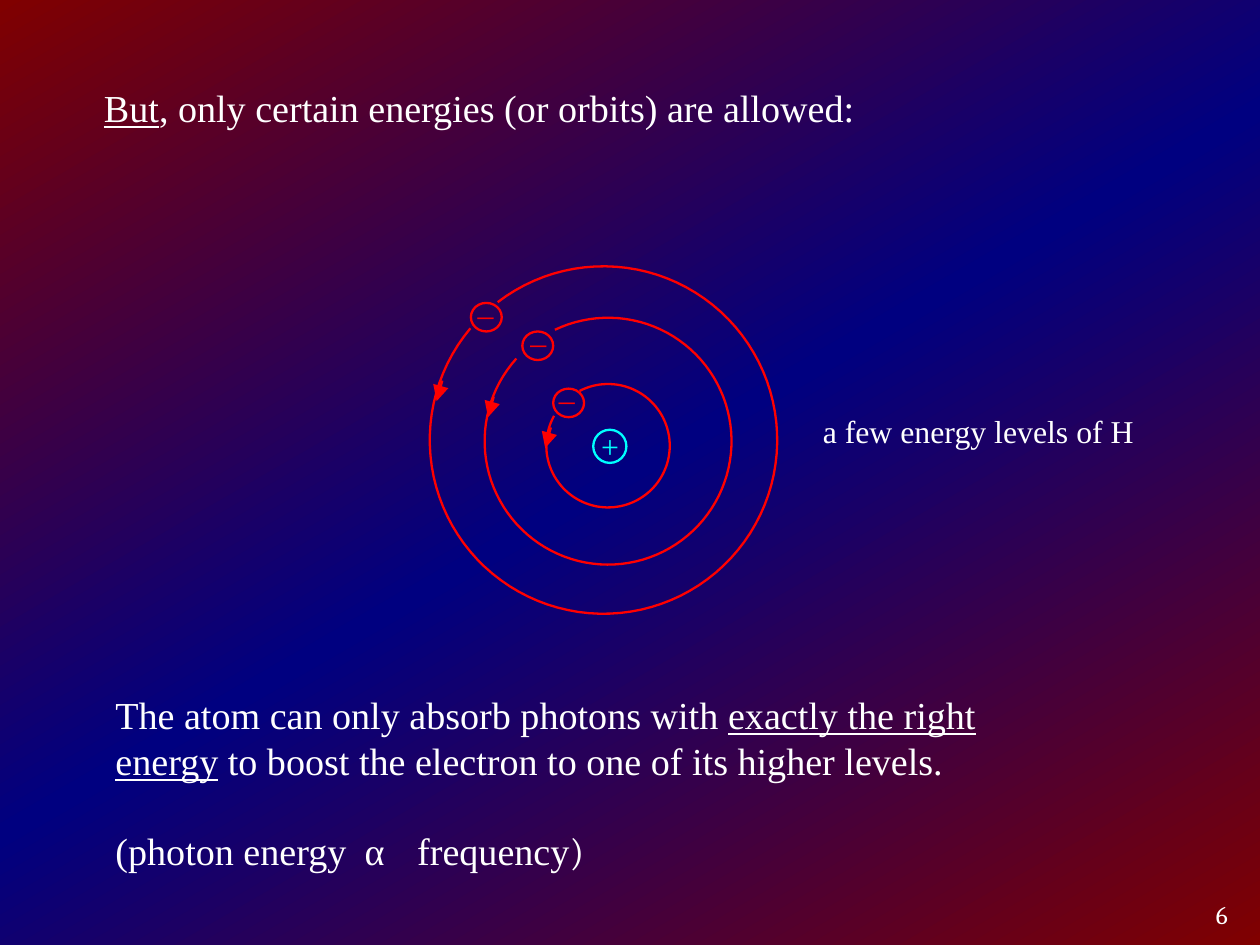
from copy import deepcopy
from math import cos, radians, sin

from lxml.etree import SubElement
from pptx import Presentation
from pptx.dml.color import RGBColor
from pptx.enum.shapes import MSO_CONNECTOR as Connector, MSO_SHAPE as Shape
from pptx.enum.text import MSO_ANCHOR as Anchor, PP_ALIGN as Align
from pptx.oxml.ns import qn
from pptx.util import Inches, Pt

MAROON = RGBColor(0x80, 0x00, 0x00)
NAVY = RGBColor(0x00, 0x00, 0x80)
RED = RGBColor(0xFF, 0x00, 0x00)
CYAN = RGBColor(0x00, 0xFF, 0xFF)
WHITE = RGBColor(0xFF, 0xFF, 0xFF)

SERIF = "Times New Roman"
NUMBER_FONT = "Cambria"
STROKE = Pt(1.45)
CM_PER_INCH = 2.54

# Orbit centre x, y, radius, then start and end angle (counterclockwise)
ORBITS = [
    (5.32, 3.9, 0.54, 151, 477.5),
    (5.32, 3.86, 1.08, 138, 475.5),
    (5.28, 3.85, 1.52, 140, 487.5),
]
# Electron left, top; minus sign left, top; arrow start x, y
ELECTRONS = [
    ((4.84, 3.4), (4.89, 3.23), (4.82, 3.74)),
    ((4.57, 2.9), (4.64, 2.73), (4.32, 3.47)),
    ((4.12, 2.65), (4.18, 2.48), (3.87, 3.33)),
]


def paint_background(slide):
    fill = slide.background.fill
    fill.gradient()
    fill.gradient_angle = 300
    stop_list = slide.element.find(".//" + qn("a:gsLst"))
    stop_list.insert(1, deepcopy(stop_list[0]))
    for stop, position, color in zip(
        fill.gradient_stops, (0, 0.5, 1), (MAROON, NAVY, MAROON)
    ):
        stop.position = position
        stop.color.rgb = color


def style_paragraph(paragraph, size, color, font=SERIF):
    paragraph.font.size = Pt(size)
    paragraph.font.name = font
    paragraph.font.color.rgb = color


def add_runs(paragraph, *pieces):
    """Add (text, underlined) pieces."""
    for text, underlined in pieces:
        run = paragraph.add_run()
        run.text = text
        if underlined:
            run.font.underline = True


def set_tabs(paragraph, *stops):
    tab_list = SubElement(paragraph._p.get_or_add_pPr(), qn("a:tabLst"))
    for stop in stops:
        SubElement(tab_list, qn("a:tab"), pos=str(Inches(stop)), algn="l")


def add_text_frame(slide, left, top, width, height, inset=0):
    box = slide.shapes.add_textbox(
        Inches(left), Inches(top), Inches(width), Inches(height)
    )
    frame = box.text_frame
    frame.word_wrap = True
    frame.margin_left = frame.margin_right = Inches(inset)
    frame.margin_top = frame.margin_bottom = Inches(inset / 2)
    return frame


def add_label(slide, text, place, size, color, font=SERIF, inset=0):
    frame = add_text_frame(slide, *place, inset=inset)
    label = frame.paragraphs[0]
    label.text = text
    style_paragraph(label, size, color, font)
    return frame


def outline(shape, color):
    shape.shadow.inherit = False
    shape.fill.background()
    shape.line.color.rgb = color
    shape.line.width = STROKE


def add_orbit(slide, center_x, center_y, radius, start, end, steps=100):
    points = []
    for step in range(steps + 1):
        angle = radians(start + (end - start) * step / steps)
        points.append((
            Inches(center_x + radius * cos(angle)),
            Inches(center_y - radius * sin(angle)),
        ))
    builder = slide.shapes.build_freeform(*points[0])
    builder.add_line_segments(points[1:], close=False)
    outline(builder.convert_to_shape(), RED)


def add_particle(slide, left, top, width, height, color):
    particle = slide.shapes.add_shape(
        Shape.OVAL, Inches(left), Inches(top), Inches(width), Inches(height)
    )
    outline(particle, color)


def add_motion_arrow(slide, x, y):
    arrow = slide.shapes.add_connector(
        Connector.STRAIGHT,
        Inches(x), Inches(y), Inches(x - 0.05), Inches(y + 0.18),
    )
    arrow.line.color.rgb = RED
    arrow.line.width = STROKE
    SubElement(arrow.line._get_or_add_ln(), qn("a:tailEnd"),
               type="triangle", w="lg", len="lg")
    SubElement(arrow._element.spPr, qn("a:effectLst"))


def add_heading(slide):
    heading = add_text_frame(slide, 0.91, 0.74, 6.79, 0.82).paragraphs[0]
    add_runs(
        heading,
        ("But", True),
        (", only certain energies (or orbits) are allowed:", False),
    )
    style_paragraph(heading, 24, WHITE)


def add_explanation(slide):
    frame = add_text_frame(slide, 1.01, 6.05, 8.05, 1.62)
    absorption = frame.paragraphs[0]
    add_runs(
        absorption,
        ("The atom can only absorb photons with ", False),
        ("exactly the right energy", True),
        (" to boost the electron to one of its higher levels.", False),
    )
    style_paragraph(absorption, 24, WHITE)

    proportion = frame.add_paragraph()
    proportion.space_before = Pt(28)
    set_tabs(proportion, 2.18, 2.64)
    add_runs(proportion, ("(photon energy\tα\tfrequency", False), (")", False))
    style_paragraph(proportion, 24, WHITE)
    proportion.runs[-1].font.name = NUMBER_FONT


def main():
    deck = Presentation()
    # The page is 28 by 21 centimetres
    deck.slide_width = Inches(28 / CM_PER_INCH)
    deck.slide_height = Inches(21 / CM_PER_INCH)
    slide = deck.slides.add_slide(deck.slide_layouts[6])
    paint_background(slide)
    add_heading(slide)

    # Atom: orbits, electrons and nucleus
    for orbit in ORBITS:
        add_orbit(slide, *orbit)
    for electron, minus, arrow in ELECTRONS:
        add_motion_arrow(slide, *arrow)
        add_particle(slide, *electron, 0.27, 0.25, RED)
        add_label(slide, "_", (*minus, 0.24, 0.48), 20, RED)
    add_label(slide, "+", (5.26, 3.73, 0.24, 0.45), 20, CYAN)
    add_particle(slide, 5.19, 3.76, 0.29, 0.29, CYAN)

    # Explanation, caption and slide number
    add_explanation(slide)
    add_label(slide, "a few energy levels of H", (7.1, 3.55, 3.58, 0.43),
              20, WHITE, inset=0.1)
    number = add_label(slide, "6", (8.27, 7.78, 2.57, 0.44),
                       16, WHITE, NUMBER_FONT, inset=0.1)
    number.vertical_anchor = Anchor.MIDDLE
    number.paragraphs[0].alignment = Align.RIGHT

    deck.save("out.pptx")


if __name__ == "__main__":
    main()
